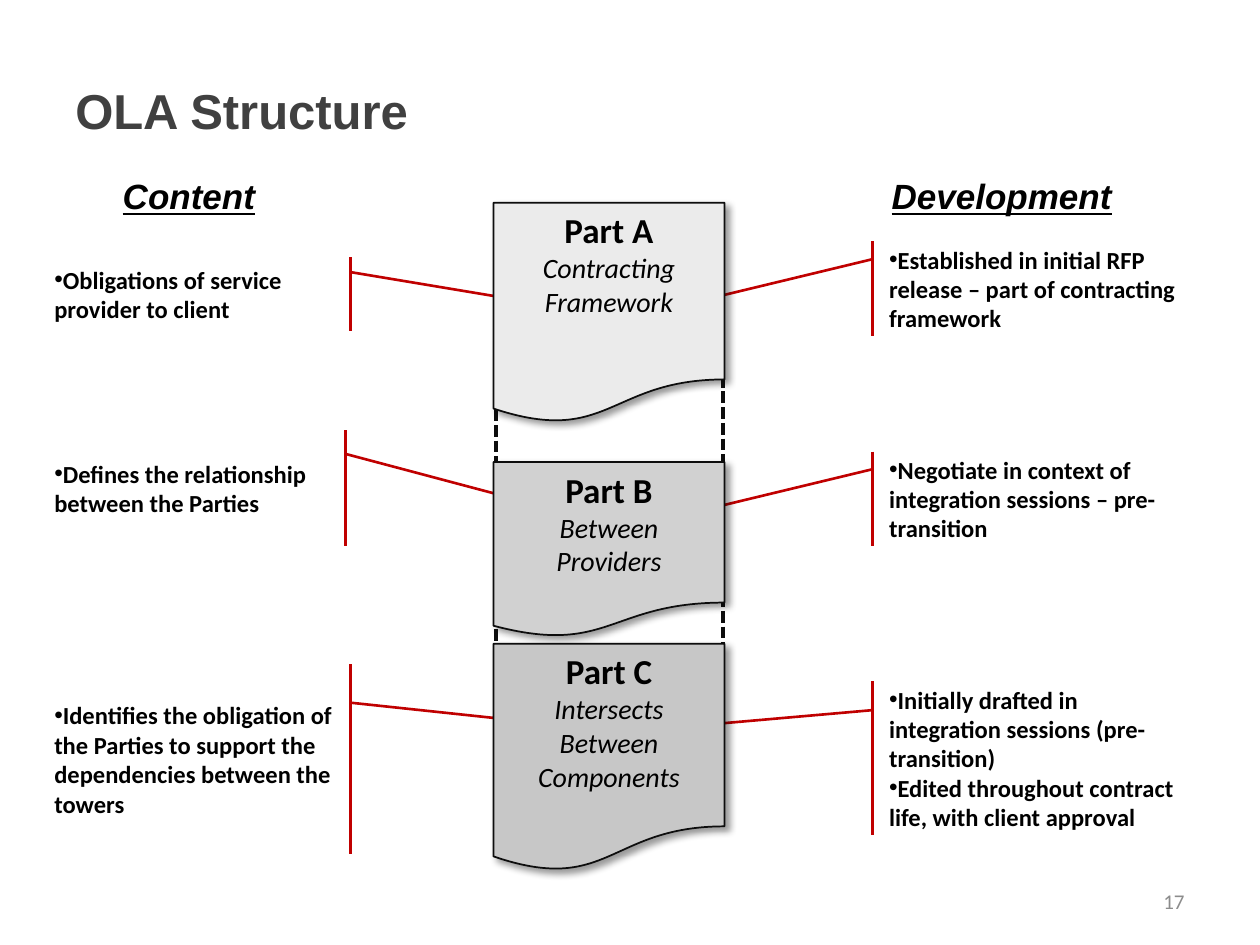
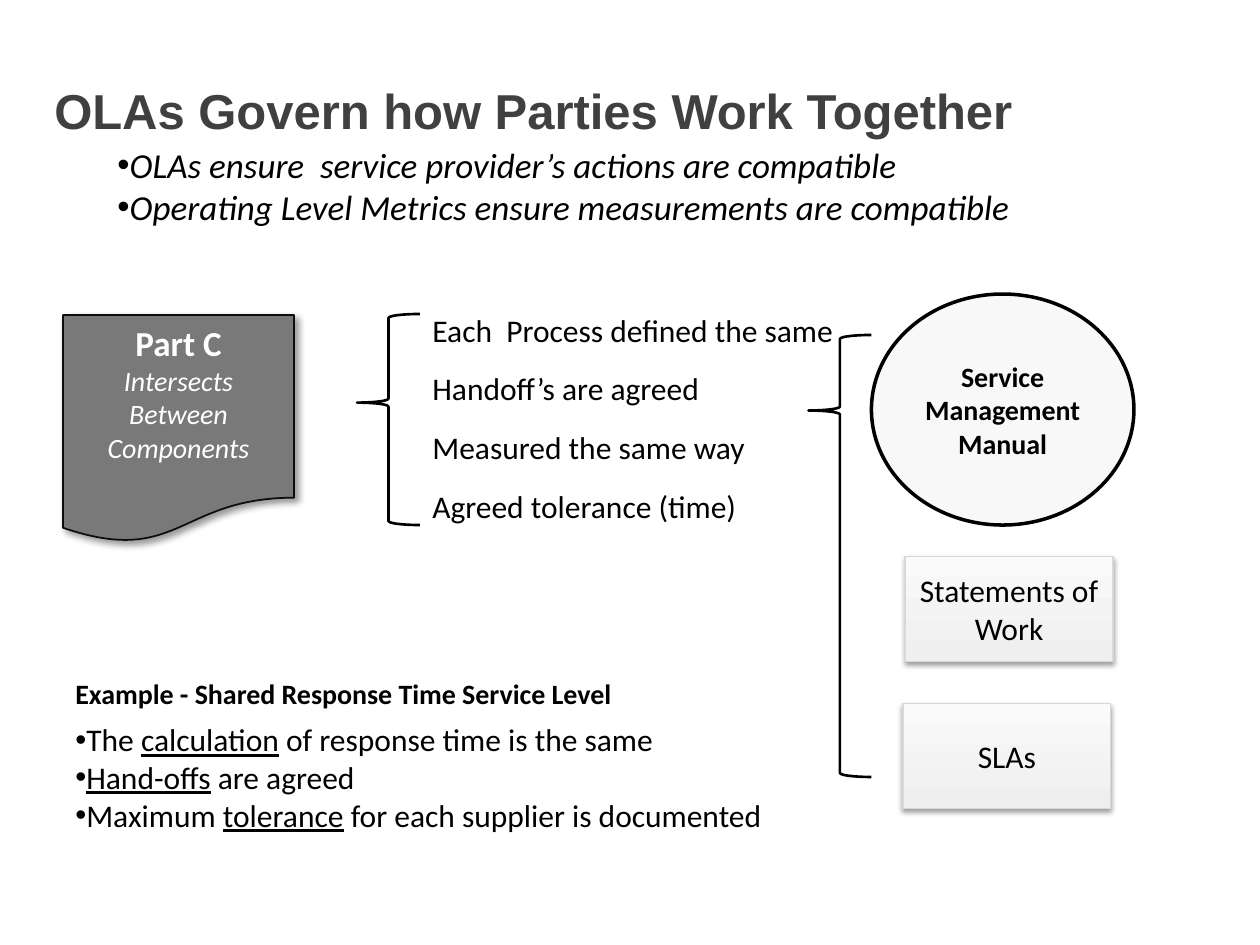
import pptx
import pptx.util
import pptx.dml.color
import pptx.enum.dml
import pptx.enum.shapes
import pptx.enum.text
import pptx.oxml
import pptx.oxml.ns
from lxml import etree

WIDE, HIGH = 10, 7.5
COLS, ROWS = 120, 90
INK, GREY, RED, EDGE = "000000", "404040", "C00000", "0D0D0D"
KIND = pptx.enum.shapes.MSO_SHAPE
ALIGN = pptx.enum.text.PP_ALIGN
HOLD = pptx.enum.text.MSO_ANCHOR
HEAD = dict(name="Arial", size=28, bold=True, color=GREY)
SIDE = dict(name="Arial", size=20, bold=True, italic=True, underline=True)
NOTE = dict(size=14, bold=True)
PART_HEAD = dict(size=20, bold=True)
PART_TEXT = dict(size=16, italic=True)
DOC_SHADE = (4, 3, 45, 40)
BOX_SHADE = (3.1, 1.6, 90, 38)


def tint(code):
    return pptx.dml.color.RGBColor.from_string(code)


def across(cols):
    return pptx.util.Inches(cols * WIDE / COLS)


def down(rows):
    return pptx.util.Inches(rows * HIGH / ROWS)


def frame(x, y, w, h):
    return across(x), down(y), across(w), down(h)


def apply(thing, **looks):
    for key, value in looks.items():
        setattr(thing, key, value)


def node(parent, tag, **looks):
    item = etree.SubElement(parent, pptx.oxml.ns.qn("a:" + tag))
    for key, value in looks.items():
        item.set(key, str(value))
    return item


def style(font, looks):
    looks = {"name": "Calibri", "color": INK, **looks}
    font.color.rgb = tint(looks.pop("color"))
    looks["size"] = pptx.util.Pt(looks["size"])
    apply(font, **looks)


def para(runs, looks, align=ALIGN.LEFT, hang=0, after=0):
    runs = [runs] if isinstance(runs, str) else runs
    return runs, looks, align, hang, after


def write(shape, paras, anchor=HOLD.MIDDLE, **looks):
    body = shape.text_frame
    apply(body, word_wrap=True, vertical_anchor=anchor, **looks)
    for i, (runs, font, align, hang, after) in enumerate(paras):
        line = body.paragraphs[0] if i == 0 else body.add_paragraph()
        if hang:
            props = line._p.get_or_add_pPr()
            indent = pptx.util.Inches(hang)
            apply(props, marL=indent, indent=-indent)
            node(props, "buFont", typeface="Arial")
            node(props, "buChar", char="•")
        apply(line, alignment=align, space_after=pptx.util.Pt(after))
        for part in runs:
            text, more = (part, {}) if isinstance(part, str) else part
            run = line.add_run()
            run.text = text
            style(run.font, {**font, **more})


def label(slide, place, paras, **looks):
    write(slide.shapes.add_textbox(*frame(*place)), paras, **looks)


def title(slide, left, text):
    label(slide, (left, 4, 108, 13), [para(text, HEAD)])


def stroke(shape, code, width):
    shape.line.color.rgb = tint(code)
    shape.line.width = pptx.util.Pt(width)


def form(slide, kind, place, line, width, fill=None, adjust=()):
    shape = slide.shapes.add_shape(kind, *frame(*place))
    shape.shadow.inherit = False
    if fill:
        shape.fill.solid()
        shape.fill.fore_color.rgb = tint(fill)
    else:
        shape.fill.background()
    stroke(shape, line, width)
    for i, value in enumerate(adjust):
        shape.adjustments[i] = value
    return shape


def shade(shape, blur, gap, turn, alpha):
    effects = shape._element.spPr.find(pptx.oxml.ns.qn("a:effectLst"))
    drop = node(effects, "outerShdw", blurRad=pptx.util.Pt(blur),
                dist=pptx.util.Pt(gap), dir=turn * 60000, rotWithShape=0)
    node(node(drop, "srgbClr", val=INK), "alpha", val=alpha * 1000)


def sheet(slide, place, fill, name, text, color=INK):
    shape = form(slide, KIND.FLOWCHART_DOCUMENT, place, EDGE, 1, fill)
    shade(shape, *DOC_SHADE)
    write(shape, [para(name, {**PART_HEAD, "color": color}, ALIGN.CENTER),
                  para(text, {**PART_TEXT, "color": color}, ALIGN.CENTER)],
          anchor=HOLD.TOP)


def callout(slide, place, tip, texts, left=False):
    start = (0.203, 0.037) if left else (0.188, -0.014)
    shape = form(slide, KIND.LINE_CALLOUT_1_ACCENT_BAR, place, RED, 1.5,
                 adjust=start + tip)
    if left:
        shape._element.spPr.find(pptx.oxml.ns.qn("a:xfrm")).set("flipH", "1")
    write(shape, [para(text, NOTE, hang=0.13) for text in texts])


def dash(slide, x, top, base):
    kind = pptx.enum.shapes.MSO_CONNECTOR.STRAIGHT
    line = slide.shapes.add_connector(kind, *frame(x, top, x, base))
    stroke(line, EDGE, 2.25)
    line.line.dash_style = pptx.enum.dml.MSO_LINE.SQUARE_DOT
    node(line._element.spPr, "effectLst")


def card(slide, place, text):
    shape = form(slide, KIND.RECTANGLE, place, "D8D8D8", 0.75)
    shape.fill.gradient()
    shape.fill.gradient_angle = 90
    for stop, code in zip(shape.fill.gradient_stops, ("EFEFEF", "FAFAFA")):
        stop.color.rgb = tint(code)
    shade(shape, *BOX_SHADE)
    pad = pptx.util.Inches(0.05)
    write(shape, [para(text, dict(size=18), ALIGN.CENTER)],
          margin_left=pad, margin_right=pad)


def brace(slide, place, *adjust):
    form(slide, KIND.LEFT_BRACE, place, INK, 1.5, adjust=adjust)


def draw_parts(slide):
    label(slide, (86, 83.4, 28, 4.8),
          [para("17", dict(size=12, color="8C8C8C"), ALIGN.RIGHT)])
    near, wide = (0.649, -0.578), 30.5
    duties = [
        (24.5, wide, 7, near, "Obligations of service provider to client"),
        (41, 30, 11, near, "Defines the relationship between the Parties"),
        (63.25, wide, 18.1, (0.314, -0.582), "Identifies the obligation of the "
         "Parties to support the dependencies between the towers")]
    for top, width, height, tip, text in duties:
        callout(slide, (4, top, width, height), tip, [text], left=True)
    steps = [
        (23, 9, near, ["Established in initial RFP release – part of "
                       "contracting framework"]),
        (43, 9, near, ["Negotiate in context of integration sessions – "
                       "pre-transition"]),
        (64.9, 14.6, (0.294, -0.594),
         ["Initially drafted in integration sessions (pre-transition)",
          "Edited throughout contract life, with client approval"])]
    for top, height, tip, texts in steps:
        callout(slide, (83.5, top, wide, height), tip, texts)
    for x, top in ((47.2, 36), (68.9, 34.3)):
        line_end = 65.3 - top
        dash_to(slide, x, top, line_end)
    parts = [
        (19.3, 21, "EBEBEB", "Part A", "Contracting Framework"),
        (44, 16.7, "D1D1D1", "Part B", "Between Providers"),
        (61.3, 21.7, "C7C7C7", "Part C", "Intersects Between Components")]
    for top, height, fill, name, text in parts:
        sheet(slide, (47, top, 22, height), fill, name, text)
    for left, text in ((6, "Content"), (83.4, "Development")):
        label(slide, (left, 16, 24, 5.3), [para(text, SIDE, ALIGN.CENTER)])
    title(slide, 6, "OLA Structure")


def dash_to(slide, x, top, length):
    dash(slide, x, top, top + length)


def draw_rules(slide):
    aims = ["OLAs ensure  service provider’s actions are compatible",
            "Operating Level Metrics ensure measurements are compatible"]
    label(slide, (10, 13, 93, 9.3),
          [para(text, dict(size=20, italic=True), hang=0.38) for text in aims])
    manual = form(slide, KIND.OVAL, (83, 28, 25, 22), INK, 2, "F8F8F8")
    write(manual, [para(text, dict(size=16, bold=True), ALIGN.CENTER)
                   for text in ("Service Management", "Manual")])
    for left, top, text in ((86.2, 53, "Statements of Work"), (86, 67, "SLAs")):
        card(slide, (left, top, 19.8, 10), text)
    plain = dict(size=18)
    terms = ["Each  Process defined the same", "Handoff’s are agreed",
             "Measured the same way", "Agreed tolerance (time)"]
    label(slide, (40, 29, 43, 25), [para(text, plain, after=12) for text in terms],
          anchor=HOLD.TOP)
    sheet(slide, (6, 30, 22, 21.7), "797979", "Part C",
          "Intersects Between Components", "FFFFFF")
    under = dict(underline=True)
    cases = [["The ", ("calculation", under), " of response time is the same"],
             [("Hand-offs", under), " are agreed"],
             ["Maximum ", ("tolerance", under),
              " for each supplier is documented"]]
    label(slide, (6, 62, 72, 19.8),
          [para("Example - Shared Response Time Service Level",
                dict(size=16, bold=True), after=6)]
          + [para(runs, plain, hang=0.31) for runs in cases])
    brace(slide, (77, 31.9, 6, 42.1), 0.063, 0.171)
    brace(slide, (34, 29.9, 6, 20.1), 0.063, 0.42)
    title(slide, 4, "OLAs Govern how Parties Work Together")


def main():
    deck = pptx.Presentation()
    apply(deck, slide_width=pptx.util.Inches(WIDE),
          slide_height=pptx.util.Inches(HIGH))
    for draw in (draw_parts, draw_rules):
        draw(deck.slides.add_slide(deck.slide_layouts[6]))
    deck.save("out.pptx")


if __name__ == "__main__":
    main()
